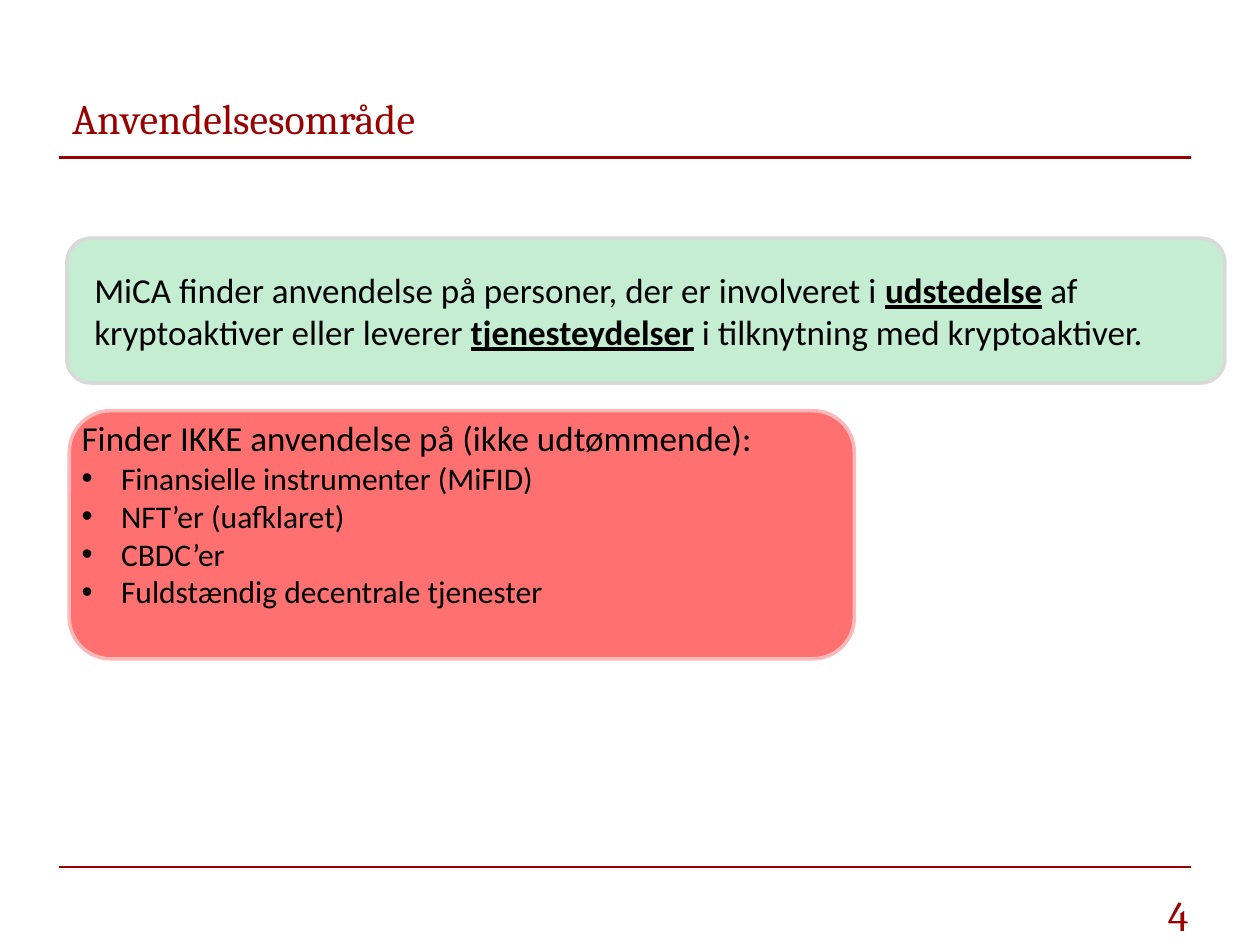
from lxml import etree
from pptx import Presentation
from pptx import util as u
from pptx.dml import color
from pptx.enum import shapes, text
from pptx.oxml import ns

Pt = u.Pt
COLORS = {
    "rule": "990000",
    "text": "000000",
    "scope": "C4EDD1",
    "scope_line": "D9D9D9",
    "excluded": "FF7070",
    "excluded_line": "FFB8B8",
}


def rgb(name):
    return color.RGBColor.from_string(COLORS[name])


def style(font, name, size, color_name):
    font.name = name
    font.size = Pt(size)
    font.color.rgb = rgb(color_name)


presentation = Presentation()
presentation.slide_width = Pt(720)
presentation.slide_height = Pt(540)
slide = presentation.slides.add_slide(presentation.slide_layouts[5])

title = slide.shapes.title
title.left, title.top, title.width, title.height = Pt(34), Pt(42.5), Pt(648), Pt(49.7)
title.text_frame.text = "Anvendelsesområde"
title.text_frame.vertical_anchor = text.MSO_ANCHOR.MIDDLE
paragraph = title.text_frame.paragraphs[0]
paragraph.alignment = text.PP_ALIGN.LEFT
style(paragraph.font, "Cambria", 24, "rule")

for y in (90, 495.3):
    rule = slide.shapes.add_connector(
        shapes.MSO_CONNECTOR.STRAIGHT, Pt(34), Pt(y), Pt(680.4), Pt(y))
    rule.line.color.rgb = rgb("rule")
    rule.line.width = Pt(1.25)
    etree.SubElement(rule._element.spPr, ns.qn("a:effectLst"))

panels = [
    ("scope", 38.2, 136.1, 661.7, 82.8),
    ("excluded", 39.6, 234.7, 448.6, 141.8),
]
for name, left, top, width, height in panels:
    panel = slide.shapes.add_shape(
        shapes.MSO_SHAPE.ROUNDED_RECTANGLE, Pt(left), Pt(top), Pt(width), Pt(height))
    panel.shadow.inherit = False
    panel.fill.solid()
    panel.fill.fore_color.rgb = rgb(name)
    panel.line.color.rgb = rgb(name + "_line")
    panel.line.width = Pt(2)

scope_box = slide.shapes.add_textbox(Pt(46.8), Pt(149.8), Pt(656), Pt(55.4))
scope_box.text_frame.word_wrap = True
paragraph = scope_box.text_frame.paragraphs[0]
style(paragraph.font, "Calibri", 20, "text")
scope_runs = [
    ("MiCA finder anvendelse på personer, der er involveret i ", False),
    ("udstedelse", True),
    (" af kryptoaktiver eller leverer ", False),
    ("tjenesteydelser", True),
    (" i tilknytning med kryptoaktiver.", False),
]
for words, emphasized in scope_runs:
    run = paragraph.add_run()
    run.text = words
    if emphasized:
        run.font.bold = True
        run.font.underline = True

excluded_box = slide.shapes.add_textbox(Pt(39.6), Pt(234.7), Pt(448.6), Pt(140.4))
frame = excluded_box.text_frame
frame.word_wrap = True
frame.text = "Finder IKKE anvendelse på (ikke udtømmende):"
style(frame.paragraphs[0].font, "Calibri", 20, "text")
exclusions = [
    "Finansielle instrumenter (MiFID)",
    "NFT’er (uafklaret)",
    "CBDC’er",
    "Fuldstændig decentrale tjenester",
]
for exclusion in exclusions:
    paragraph = frame.add_paragraph()
    paragraph.text = exclusion
    properties = paragraph._p.get_or_add_pPr()
    properties.set("marL", str(Pt(22.5)))
    properties.set("indent", str(-Pt(22.5)))
    etree.SubElement(properties, ns.qn("a:buFont"), typeface="Arial")
    etree.SubElement(properties, ns.qn("a:buChar"), char="•")
    style(paragraph.font, "Calibri", 18, "text")

number_box = slide.shapes.add_textbox(Pt(34), Pt(500.4), Pt(652.3), Pt(33.8))
number_box.text_frame.word_wrap = True
number_box.text_frame.text = "4"
number_box.text_frame.margin_top = Pt(8)
paragraph = number_box.text_frame.paragraphs[0]
paragraph.alignment = text.PP_ALIGN.RIGHT
style(paragraph.font, "Cambria", 24, "rule")

presentation.save("out.pptx")
